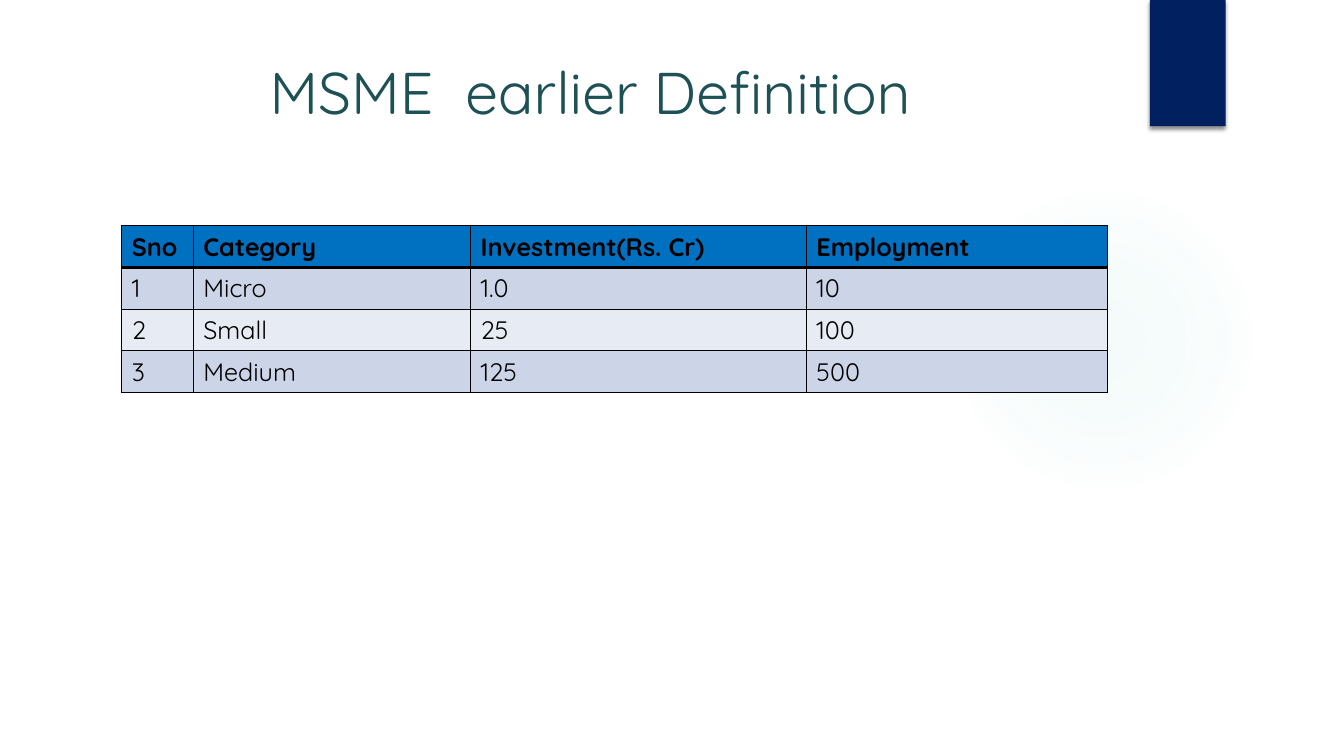
import pptx
import pptx.dml.color
import pptx.enum.shapes
import pptx.enum.text
import pptx.oxml
import pptx.oxml.ns
import pptx.util

Cm = pptx.util.Cm
Pt = pptx.util.Pt

COLORS = {
    "background": "FFFFFF",
    "glow": "7CCEC9",
    "ribbon": "002060",
    "title": "1E5155",
    "text": "000000",
    "border": "000000",
    "header": "0070C0",
    "odd_row": "CCD5E8",
    "even_row": "E7EBF4",
}
COLUMN_WIDTHS = [1.8, 6.99, 8.46, 7.59]
ROW_HEIGHT = 1.05
ROWS = [
    ["Sno", "Category", "Investment(Rs. Cr)", "Employment"],
    ["1", "Micro", "1.0", "10"],
    ["2", "Small", "25", "100"],
    ["3", "Medium", "125", "500"],
]


def rgb(name):
    return pptx.dml.color.RGBColor.from_string(COLORS[name])


def xml_element(tag, content, attributes=""):
    namespace = pptx.oxml.ns.nsdecls("a")
    return pptx.oxml.parse_xml(f"<a:{tag} {namespace} {attributes}>{content}</a:{tag}>")


def color_xml(name, alpha=100):
    """Return a solid colour, with its opacity in percent."""
    return f'<a:srgbClr val="{COLORS[name]}"><a:alpha val="{alpha * 1000}"/></a:srgbClr>'


class SlideBuilder:
    font_name = "Quicksand"

    def __init__(self, slide):
        self.slide = slide
        fill = slide.background.fill
        fill.solid()
        fill.fore_color.rgb = rgb("background")

    def format_text(self, paragraph, color, **values):
        for name, value in {"name": self.font_name, **values}.items():
            setattr(paragraph.font, name, value)
        paragraph.font.color.rgb = rgb(color)

    def shape(self, kind, left, top, width, height):
        shape = self.slide.shapes.add_shape(
            kind, Cm(left), Cm(top), Cm(width), Cm(height))
        shape.shadow.inherit = False
        shape.line.fill.background()
        return shape

    def glow(self, left, top, size):
        """Add a circle that fades out from its centre."""
        circle = self.shape(pptx.enum.shapes.MSO_SHAPE.OVAL, left, top, size, size)
        stops = "".join(
            f'<a:gs pos="{position * 1000}">{color_xml("glow", alpha)}</a:gs>'
            for position, alpha in [(0, 7), (36, 6), (69, 0)])
        center = '<a:fillToRect l="50000" t="50000" r="50000" b="50000"/>'
        gradient = xml_element(
            "gradFill", f'<a:gsLst>{stops}</a:gsLst><a:path path="circle">{center}</a:path>')
        properties = circle._element.spPr
        properties.find(pptx.oxml.ns.qn("a:prstGeom")).addnext(gradient)

    def ribbon(self, left, top, width, height):
        """Add a solid block with a soft shadow below it."""
        block = self.shape(
            pptx.enum.shapes.MSO_SHAPE.RECTANGLE, left, top, width, height)
        block.fill.solid()
        block.fill.fore_color.rgb = rgb("ribbon")
        effects = block._element.spPr.find(pptx.oxml.ns.qn("a:effectLst"))
        effects.append(xml_element(
            "outerShdw", color_xml("border", 45),
            f'blurRad="{Pt(3)}" dist="{Pt(2)}" dir="5400000" rotWithShape="0"'))

    def title(self, text, left, top, width, height):
        box = self.slide.shapes.add_textbox(Cm(left), Cm(top), Cm(width), Cm(height))
        frame = box.text_frame
        frame.word_wrap = True
        frame.vertical_anchor = pptx.enum.text.MSO_ANCHOR.TOP
        paragraph = frame.paragraphs[0]
        paragraph.text = text
        paragraph.alignment = pptx.enum.text.PP_ALIGN.CENTER
        self.format_text(paragraph, "title", size=Pt(42))

    def cell(self, cell, text, fill, bold, borders):
        cell.text = text
        cell.fill.solid()
        cell.fill.fore_color.rgb = rgb(fill)
        self.format_text(cell.text_frame.paragraphs[0], "text", size=Pt(18), bold=bold)
        properties = cell._tc.get_or_add_tcPr()
        line_fill = f'<a:solidFill>{color_xml("border")}</a:solidFill>'
        for index, (side, width) in enumerate(borders.items()):
            properties.insert(
                index, xml_element(f"ln{side}", line_fill, f'w="{Pt(width)}"'))

    def table(self, rows, left, top):
        frame = self.slide.shapes.add_table(
            len(rows), len(COLUMN_WIDTHS), Cm(left), Cm(top),
            Cm(sum(COLUMN_WIDTHS)), Cm(ROW_HEIGHT * len(rows)))
        table = frame.table
        for column, width in zip(table.columns, COLUMN_WIDTHS):
            column.width = Cm(width)
        for row_index, values in enumerate(rows):
            table.rows[row_index].height = Cm(ROW_HEIGHT)
            is_header = row_index == 0
            fill = "header" if is_header else ("even_row", "odd_row")[row_index % 2]
            borders = {"L": 1, "R": 1, "T": 3 if row_index == 1 else 1,
                       "B": 3 if is_header else 1}
            for column_index, text in enumerate(values):
                self.cell(table.cell(row_index, column_index), text, fill, is_header, borders)


def main():
    presentation = pptx.Presentation()
    presentation.slide_width = Cm(33.87)
    presentation.slide_height = Cm(19.05)
    builder = SlideBuilder(presentation.slides.add_slide(presentation.slide_layouts[6]))
    builder.glow(23.9, 4.65, 7.82)
    builder.ribbon(28.98, 0, 1.91, 3.18)
    builder.title("MSME  earlier Definition", 1.8, 1.27, 26.14, 3.89)
    builder.table(ROWS, 3.07, 5.69)
    presentation.save("out.pptx")


if __name__ == "__main__":
    main()
